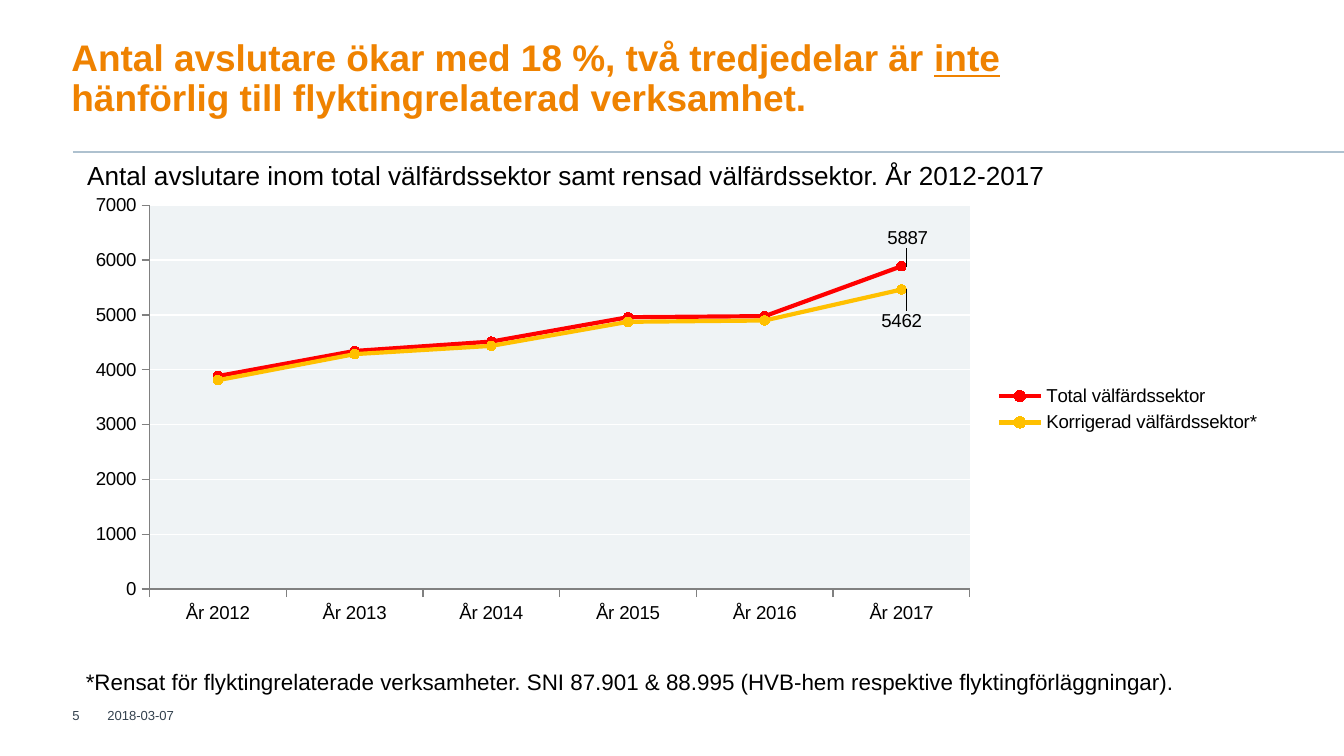
from dataclasses import dataclass

from lxml import etree
from pptx import Presentation
from pptx.chart.data import CategoryChartData
from pptx.dml.color import RGBColor
from pptx.enum.chart import XL_CHART_TYPE as ChartType
from pptx.enum.chart import XL_LABEL_POSITION as LabelPosition
from pptx.enum.chart import XL_LEGEND_POSITION as LegendPosition
from pptx.enum.chart import XL_MARKER_STYLE as MarkerStyle
from pptx.enum.chart import XL_TICK_MARK as TickMark
from pptx.enum.shapes import MSO_CONNECTOR as Connector
from pptx.enum.text import MSO_ANCHOR as Anchor
from pptx.oxml import parse_xml
from pptx.oxml.ns import nsdecls, qn
from pptx.util import Pt


@dataclass(frozen=True)
class Theme:
    """Colours, font and type sizes of the deck."""
    font: str = "Arial"
    title: RGBColor = RGBColor(0xEF, 0x82, 0x00)
    text: RGBColor = RGBColor(0, 0, 0)
    footer: RGBColor = RGBColor(0x33, 0x41, 0x4E)
    rule: RGBColor = RGBColor(0xAE, 0xC1, 0xCF)
    axis: RGBColor = RGBColor(0x80, 0x80, 0x80)
    grid: RGBColor = RGBColor(0xFF, 0xFF, 0xFF)
    plot: str = "EFF3F5"
    total: RGBColor = RGBColor(0xFF, 0, 0)
    corrected: RGBColor = RGBColor(0xFF, 0xC0, 0)
    title_size: float = 19.8
    subtitle_size: float = 14
    note_size: float = 12
    chart_size: float = 10
    footer_size: float = 7


THEME = Theme()
YEARS = [f"År {year}" for year in range(2012, 2018)]
SERIES = [
    ("Total välfärdssektor", (3884, 4342, 4513, 4958, 4977, 5887),
     THEME.total, (-0.02, -0.063)),
    ("Korrigerad välfärdssektor*", (3809, 4285, 4435, 4874, 4898, 5462),
     THEME.corrected, (-0.025, 0.07)),
]


def add_text(page, box, pieces, size, color, anchor=Anchor.TOP,
             insets=(7.2, 3.6, 7.2, 3.6), wrap=False):
    """Place one paragraph made of text pieces in a box and return it."""
    frame = page.shapes.add_textbox(*map(Pt, box)).text_frame
    frame.word_wrap = wrap
    frame.vertical_anchor = anchor
    (frame.margin_left, frame.margin_top,
     frame.margin_right, frame.margin_bottom) = map(Pt, insets)
    para = frame.paragraphs[0]
    for piece in pieces:
        span = para.add_run()
        span.text = piece
        span.font.name = THEME.font
        span.font.size = Pt(size)
        span.font.color.rgb = color
    return para


def add_header(page, box):
    """Place the headline and the rule that runs to the page edge."""
    left, top, width, height = box
    para = add_text(page, (left, top, 515.5, 48.2),
                    ["Antal avslutare ökar med 18 %, två tredjedelar är ", "inte",
                     " hänförlig till flyktingrelaterad verksamhet."],
                    THEME.title_size, THEME.title, Anchor.BOTTOM,
                    (0, 0, 7.2, 3.6), True)
    para.line_spacing = 0.9
    for span in para.runs:
        span.font.bold = True
    para.runs[1].font.underline = True
    bottom = top + height
    rule = page.shapes.add_connector(Connector.STRAIGHT, Pt(left + 0.7), Pt(bottom),
                                     Pt(left + width), Pt(bottom))
    rule.line.color.rgb = THEME.rule
    rule.line.width = Pt(1)
    etree.SubElement(rule._element.spPr, qn("a:effectLst"))


def style_plot(chart, area):
    """Fix the inner plot area and give it its background."""
    plot_area = chart._chartSpace.chart.plotArea
    for layout in plot_area.findall(qn("c:layout")):
        plot_area.remove(layout)
    values = "".join(f'<c:{tag} val="{value}"/>' for tag, value in zip("xywh", area))
    plot_area.insert(0, parse_xml(
        f'<c:layout {nsdecls("c")}><c:manualLayout><c:layoutTarget val="inner"/>'
        f'<c:xMode val="edge"/><c:yMode val="edge"/>{values}'
        '</c:manualLayout></c:layout>'))
    plot_area.append(parse_xml(
        f'<c:spPr {nsdecls("c", "a")}><a:solidFill><a:srgbClr val="{THEME.plot}"/>'
        '</a:solidFill></c:spPr>'))


def style_series(series, color, offset):
    """Colour a line and label its last point at an offset with a leader line."""
    series.smooth = False
    series.format.line.color.rgb = color
    series.format.line.width = Pt(2.25)
    series.marker.style = MarkerStyle.CIRCLE
    series.marker.size = 5
    series.marker.format.fill.solid()
    series.marker.format.fill.fore_color.rgb = color
    series.marker.format.line.color.rgb = color
    series.data_labels.show_value = False
    series.points[len(YEARS) - 1].data_label.position = LabelPosition.RIGHT
    labels = series._element.find(qn("c:dLbls"))
    x, y = offset
    labels.find(qn("c:dLbl")).insert(1, parse_xml(
        f'<c:layout {nsdecls("c")}><c:manualLayout><c:x val="{x}"/><c:y val="{y}"/>'
        '</c:manualLayout></c:layout>'))
    labels.append(parse_xml(
        f'<c:extLst {nsdecls("c")}><c:ext uri="{{CE6537A1-D6FC-4f65-9D91-7224C49458BB}}" '
        'xmlns:c15="http://schemas.microsoft.com/office/drawing/2012/chart">'
        '<c15:showLeaderLines val="1"/></c:ext></c:extLst>'))


def add_line_chart(page, box):
    """Place the line chart of leavers per year."""
    data = CategoryChartData()
    data.categories = YEARS
    for name, values, _, _ in SERIES:
        data.add_series(name, values)
    chart = page.shapes.add_chart(ChartType.LINE_MARKERS, *map(Pt, box), data).chart
    chart.has_title = False
    chart.font.name = THEME.font
    chart.font.size = Pt(THEME.chart_size)
    chart.font.color.rgb = THEME.text
    chart.has_legend = True
    chart.legend.position = LegendPosition.RIGHT
    chart.legend.include_in_layout = False
    for axis in (chart.category_axis, chart.value_axis):
        axis.major_tick_mark = TickMark.OUTSIDE
        axis.minor_tick_mark = TickMark.NONE
        axis.format.line.color.rgb = THEME.axis
    scale = chart.value_axis
    scale.minimum_scale, scale.maximum_scale, scale.major_unit = 0, 7000, 1000
    scale.has_major_gridlines = True
    scale.major_gridlines.format.line.color.rgb = THEME.grid
    scale.major_gridlines.format.line.width = Pt(0.75)
    plot = chart.plots[0]
    plot.vary_by_categories = False
    for series, (_, _, color, offset) in zip(plot.series, SERIES):
        style_series(series, color, offset)
    style_plot(chart, (0.065, 0.044, 0.682, 0.858))


def add_footer(page, box):
    """Place the page number and the date side by side."""
    left, top, _, height = box
    for text, shift, width, inset in (("5", 0, 25.2, 7.2), ("2018-03-07", 25.9, 43.2, 0)):
        add_text(page, (left + shift, top, width, height), [text],
                 THEME.footer_size, THEME.footer, Anchor.MIDDLE,
                 (inset, 3.6, inset, 3.6), True)


def build_deck():
    """Build the one-page deck and save it."""
    deck = Presentation()
    deck.slide_width, deck.slide_height = Pt(720), Pt(405)
    page = deck.slides.add_slide(deck.slide_layouts[6])
    add_header(page, (38.3, 19.4, 681.7, 62))
    add_line_chart(page, (38.2, 99.4, 644.4, 239.8))
    add_text(page, (38.9, 354.2, 599, 21.6),
             ["*Rensat för flyktingrelaterade verksamheter. SNI 87.901 & 88.995 "
              "(HVB-hem respektive flyktingförläggningar)."],
             THEME.note_size, THEME.text)
    add_text(page, (39.6, 82.1, 530, 24.5),
             ["Antal avslutare inom total välfärdssektor samt rensad välfärdssektor. "
              "År 2012-2017"],
             THEME.subtitle_size, THEME.text)
    add_footer(page, (31.7, 378.7, 69.1, 9.4))
    deck.save("out.pptx")


if __name__ == "__main__":
    build_deck()
